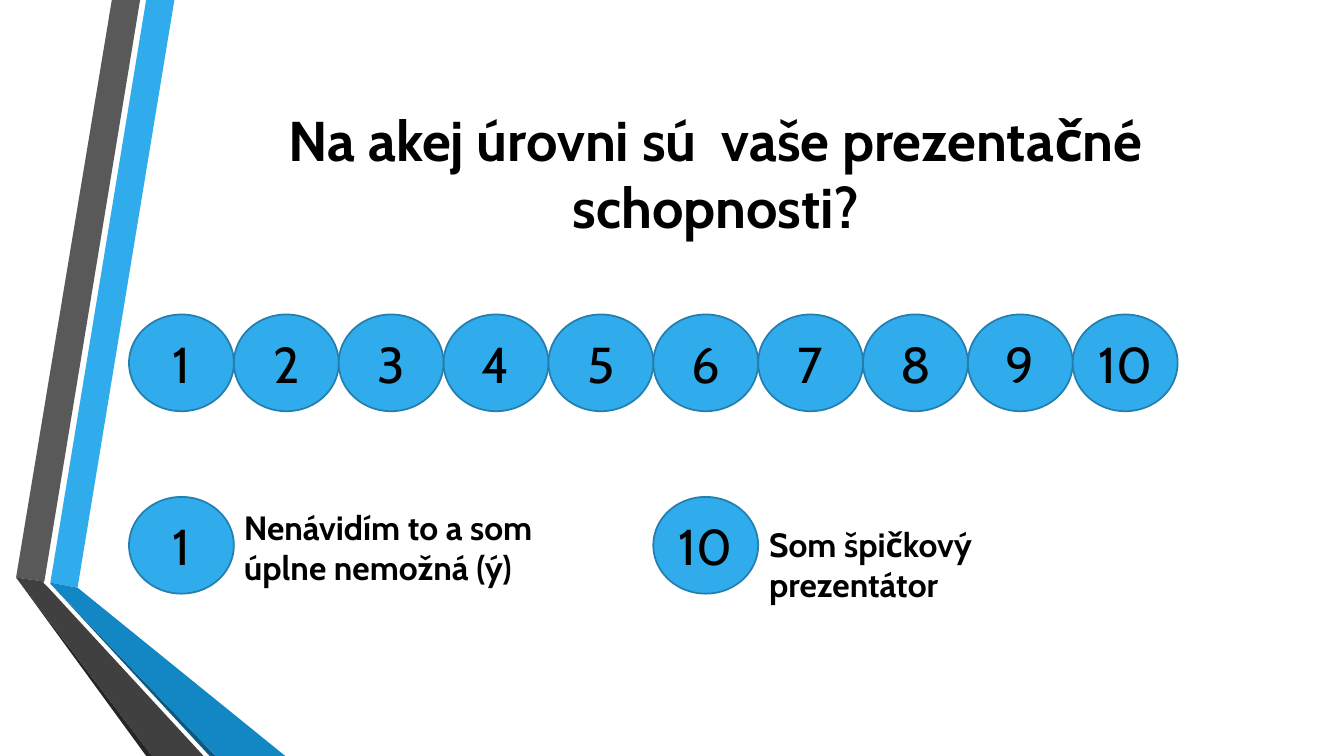
from dataclasses import dataclass

from pptx import Presentation
from pptx.dml.color import RGBColor
from pptx.enum.shapes import MSO_SHAPE
from pptx.enum.text import MSO_ANCHOR, PP_ALIGN
from pptx.shapes.autoshape import Shape
from pptx.slide import Slide
from pptx.util import Pt

OVAL = MSO_SHAPE.OVAL
TOP, MIDDLE = MSO_ANCHOR.TOP, MSO_ANCHOR.MIDDLE
LEFT, CENTER = PP_ALIGN.LEFT, PP_ALIGN.CENTER

PX = 9144  # EMU per px, 100 px to the inch
FONT = "Cabin"
COLORS = {
    "blue": "30ACEC",
    "blue_shade": "1287C3",
    "blue_dark": "0C5A82",
    "blue_outline": "247FAF",
    "grey": "595959",
    "grey_shade": "404040",
    "grey_dark": "262626",
    "text": "000000",
}

CIRCLE_WIDTH, CIRCLE_HEIGHT = 104, 96
SCALE_LEFT, SCALE_TOP, LEGEND_TOP = 128, 312, 493
LEVELS = range(1, 11)


@dataclass(frozen=True)
class Ribbon:
    color: str
    points: tuple[tuple[int, int], ...]


@dataclass(frozen=True)
class Label:
    text: str
    left: int
    top: int
    width: int
    height: int
    size: int
    align: PP_ALIGN = LEFT
    anchor: MSO_ANCHOR = TOP
    margin_right: int = 10


RIBBONS = (
    Ribbon("blue", ((50, 578), (77, 583), (173, 0), (145, 0))),
    Ribbon("grey", ((139, 0), (111, 0), (16, 573), (44, 577))),
    Ribbon("grey_dark", ((16, 573), (145, 750), (151, 750))),
    Ribbon("blue_dark", ((50, 579), (208, 750), (214, 750))),
    Ribbon("blue_shade", ((50, 579), (214, 750), (283, 750), (77, 583), (50, 578))),
    Ribbon("grey_shade", ((202, 750), (48, 583), (43, 578), (44, 577), (16, 573), (151, 750))),
)

LABELS = (
    Label("Na akej úrovni sú  vaše prezentačné schopnosti?", 162, 75, 1096, 192, 40, CENTER, MIDDLE),
    Label("Nenávidím to a som úplne nemožná (ý)", 232, 498, 395, 91, 24),
    Label("Som špičkový prezentátor", 753, 515, 395, 50, 24, margin_right=40),
)


def color(name: str) -> RGBColor:
    return RGBColor.from_string(COLORS[name])


def write(shape: Shape, text: str, size: int, align: PP_ALIGN, anchor: MSO_ANCHOR, bold: bool) -> None:
    frame = shape.text_frame
    frame.word_wrap = True
    frame.vertical_anchor = anchor
    paragraph = frame.paragraphs[0]
    paragraph.alignment = align
    run = paragraph.add_run()
    run.text = text
    run.font.name = FONT
    run.font.size = Pt(size)
    run.font.bold = bold
    run.font.color.rgb = color("text")


def draw_ribbon(slide: Slide, ribbon: Ribbon) -> None:
    start, *rest = ribbon.points
    builder = slide.shapes.build_freeform(*start, scale=PX)
    builder.add_line_segments(rest, close=True)
    shape = builder.convert_to_shape()
    shape.shadow.inherit = False
    shape.fill.solid()
    shape.fill.fore_color.rgb = color(ribbon.color)
    shape.line.fill.background()


def draw_level(slide: Slide, level: int, top: int, column: int) -> None:
    left = SCALE_LEFT + column * CIRCLE_WIDTH
    shape = slide.shapes.add_shape(
        OVAL, left * PX, top * PX, CIRCLE_WIDTH * PX, CIRCLE_HEIGHT * PX)
    shape.shadow.inherit = False
    shape.fill.solid()
    shape.fill.fore_color.rgb = color("blue")
    shape.line.color.rgb = color("blue_outline")
    shape.line.width = Pt(1.25)
    write(shape, str(level), 36, CENTER, MIDDLE, bold=False)


def draw_label(slide: Slide, label: Label) -> None:
    shape = slide.shapes.add_textbox(
        label.left * PX, label.top * PX, label.width * PX, label.height * PX)
    shape.text_frame.margin_right = label.margin_right * PX
    write(shape, label.text, label.size, label.align, label.anchor, bold=True)


def main() -> None:
    presentation = Presentation()
    presentation.slide_width = 1333 * PX
    presentation.slide_height = 750 * PX
    slide = presentation.slides.add_slide(presentation.slide_layouts[6])

    # Folded ribbons on the left edge
    for ribbon in RIBBONS:
        draw_ribbon(slide, ribbon)

    # Scale from 1 to 10
    for column, level in enumerate(LEVELS):
        draw_level(slide, level, SCALE_TOP, column)

    # Legend for both ends of the scale
    for level, column in ((1, 0), (10, 5)):
        draw_level(slide, level, LEGEND_TOP, column)

    # Title and legend texts
    for label in LABELS:
        draw_label(slide, label)

    presentation.save("out.pptx")


if __name__ == "__main__":
    main()
